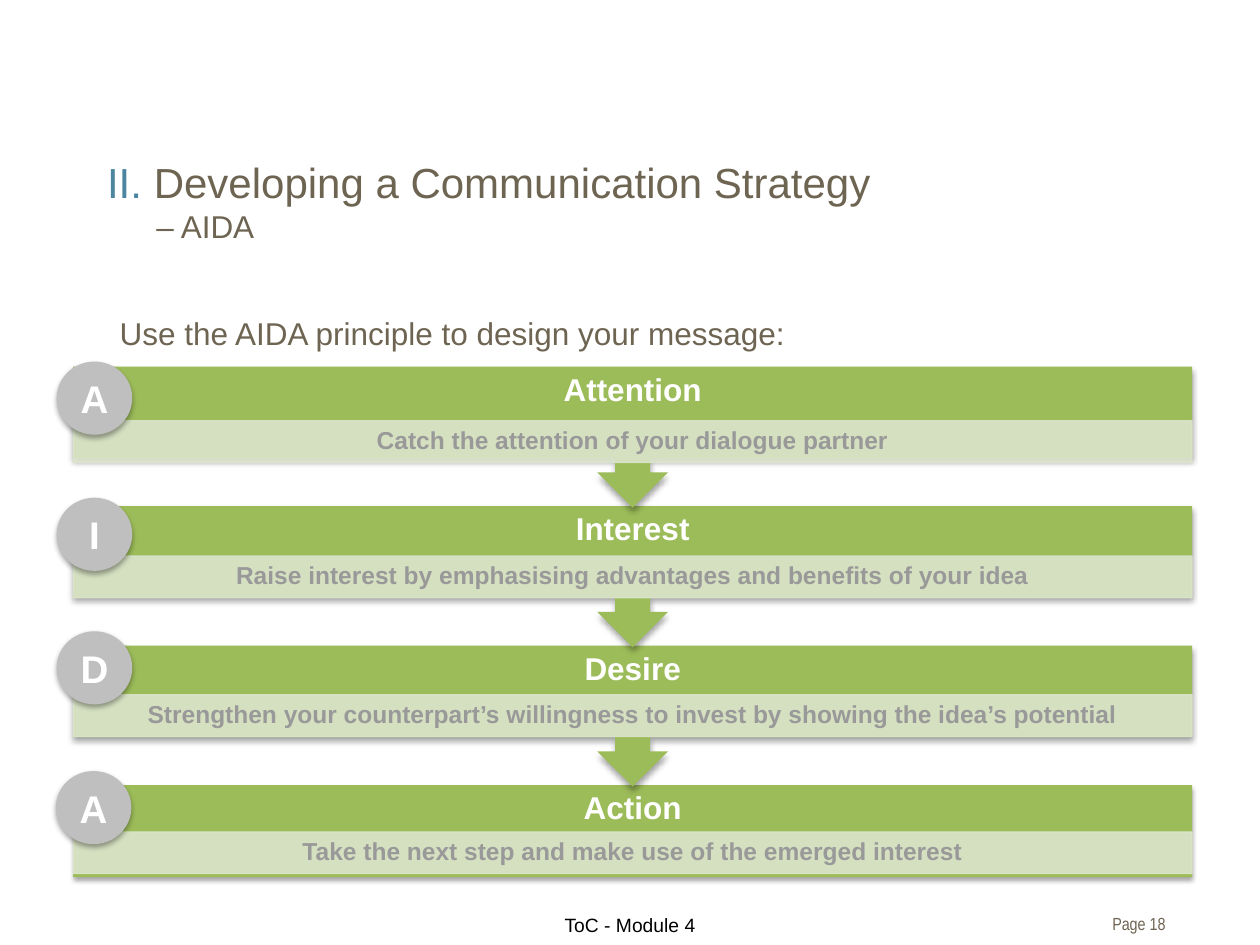
import pptx
import pptx.dml.color
import pptx.enum.shapes
import pptx.enum.text
import pptx.oxml
import pptx.oxml.ns
import pptx.util

Pt = pptx.util.Pt
Kind = pptx.enum.shapes.MSO_SHAPE
Align = pptx.enum.text.PP_ALIGN
Anchor = pptx.enum.text.MSO_ANCHOR

HUES = {
    "brown": "6E6452", "blue": "4B859F", "green": "9CBC59", "pale": "DCE5CD",
    "silver": "BFBFBF", "gray": "999999", "white": "FFFFFF", "black": "000000",
}
TITLE = [("II. ", 24, "blue"), ("Developing a Communication Strategy", 24, "brown"),
         None, ("– AIDA", 18, "brown")]
LEAD = "Use the AIDA principle to design your message:"
STEPS = [
    ("A", "Attention", "Catch the attention of your dialogue partner", 31, (32.4, 206.6)),
    ("I", "Interest", "Raise interest by emphasising advantages and benefits of your idea",
     28.6, (32.4, 284.4)),
    ("D", "Desire",
     "Strengthen your counterpart’s willingness to invest by showing the idea’s potential",
     28.2, (32.4, 360.7)),
    ("A", "Action", "Take the next step and make use of the emerged interest",
     26.8, (31.9, 440.6)),
]
LEFT, TOP, WIDE, PITCH = 41.8, 209.5, 639.4, 79.7
HEAD, BAND, CALL, LAST = 28.1, 23.8, 80.6, 52.6


def tint(name):
    return pptx.dml.color.RGBColor.from_string(HUES[name])


def node(xml):
    return pptx.oxml.parse_xml(xml.replace(">", f" {pptx.oxml.ns.nsdecls('a')}>", 1))


def write(item, text, size=18, hue="brown", bold=False, face="Arial", align=Align.LEFT,
          anchor=Anchor.TOP, inset=(7.2, 3.6, 7.2, 3.6), space=1, indent=None):
    frame = item.text_frame
    frame.word_wrap = True
    frame.auto_size = pptx.enum.text.MSO_AUTO_SIZE.NONE
    frame.vertical_anchor = anchor
    (frame.margin_left, frame.margin_top,
     frame.margin_right, frame.margin_bottom) = map(Pt, inset)
    para = frame.paragraphs[0]
    para.alignment, para.line_spacing = align, space
    para.space_before = Pt(0)
    if indent:
        props = para._p.get_or_add_pPr()
        props.set("marL", str(Pt(indent[0])))
        props.set("indent", str(Pt(indent[1])))
        props.append(node("<a:buNone></a:buNone>"))
    for part in [(text, size, hue)] if isinstance(text, str) else text:
        if part is None:
            para.add_line_break()
            continue
        run = para.add_run()
        run.text = part[0]
        run.font.size, run.font.name, run.font.bold = Pt(part[1]), face, bold
        run.font.color.rgb = tint(part[2])


def place(item, *box):
    item.left, item.top, item.width, item.height = map(Pt, box)
    return item


def label(page, box, text, **look):
    write(page.shapes.add_textbox(*map(Pt, box)), text, **look)


def draw(page, kind, box, hue, shade=True):
    item = page.shapes.add_shape(kind, *map(Pt, box))
    item.fill.solid()
    item.fill.fore_color.rgb = tint(hue)
    item.line.fill.background()
    item.shadow.inherit = False
    if shade:
        item._element.spPr.find(pptx.oxml.ns.qn("a:effectLst")).append(node(
            f'<a:outerShdw blurRad="{Pt(3.1)}" dist="{Pt(1.8)}" dir="5400000" '
            f'rotWithShape="0"><a:srgbClr val="{HUES["black"]}">'
            '<a:alpha val="35000"/></a:srgbClr></a:outerShdw>'))
    return item


def fade(item):
    for mark in item._element.spPr.iter(pptx.oxml.ns.qn("a:srgbClr")):
        mark.append(node('<a:alpha val="90000"></a:alpha>'))


def main():
    """Build the slide on the AIDA principle."""
    deck = pptx.Presentation()
    deck.slide_width, deck.slide_height = Pt(720), Pt(540)
    page = deck.slides.add_slide(deck.slide_layouts[1])
    title, body = page.placeholders
    write(place(title, 54, 83.5, 612, 70.6), TITLE, inset=(7.2, 6, 7.2, 3.6),
          indent=(28.1, -28.1))
    write(place(body, 54, 175.7, 612, 34.6), LEAD, indent=(7.2, 0))
    body.text_frame.paragraphs[0].level = 1

    mid = {"bold": True, "align": Align.CENTER, "anchor": Anchor.MIDDLE}
    for row, (_, name, note, drop, _) in reversed(list(enumerate(STEPS))):
        top = TOP + row * PITCH
        if row == len(STEPS) - 1:
            draw(page, Kind.RECTANGLE, (LEFT, top, WIDE, LAST), "green")
        else:
            call = draw(page, Kind.UP_ARROW_CALLOUT, (LEFT, top, WIDE, CALL), "green")
            call.rotation = 180
        label(page, (LEFT, top, WIDE, HEAD), name, hue="white", inset=[10] * 4,
              space=0.9, **mid)
        band = draw(page, Kind.RECTANGLE, (LEFT, top + drop, WIDE, BAND), "pale", False)
        band.line.color.rgb = tint("pale")
        band.line.width = Pt(0.75)
        fade(band)
        write(band, note, size=14, hue="gray", inset=(8, 1.4, 8, 1.4), space=0.9, **mid)

    for sign, _, _, _, spot in STEPS:
        disc = draw(page, Kind.OVAL, (*spot, 43.2, 41.8), "silver")
        write(disc, sign, size=22, hue="white", **mid)

    label(page, (225.4, 518.4, 269.3, 19.4), "ToC - Module 4", size=11, hue="black",
          align=Align.CENTER)
    label(page, (593.3, 518.4, 72.7, 19.4), "Page 18", size=10, face="Arial Narrow",
          align=Align.RIGHT, inset=(7.2, 3.6, 0, 3.6))
    deck.save("out.pptx")


if __name__ == "__main__":
    main()
